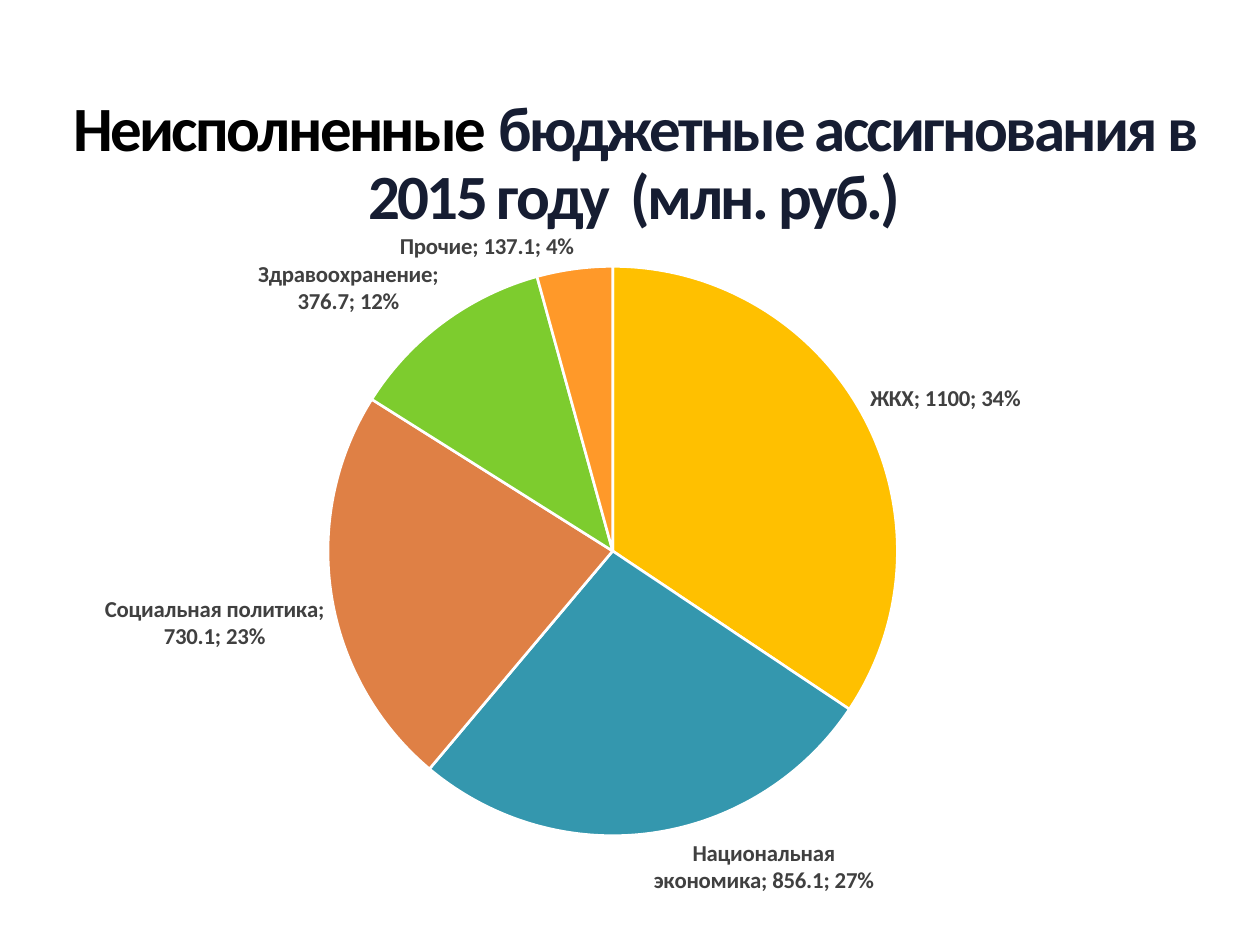
import pptx
import pptx.chart.data
import pptx.dml.color
import pptx.enum.chart
import pptx.enum.text
import pptx.util
from dataclasses import dataclass
from lxml import etree
from pptx.util import Cm


@dataclass(frozen=True)
class Theme:
    font: str = "Calibri"
    title_size: int = 36
    label_size: int = 13
    chart_size: int = 10
    black: str = "000000"
    navy: str = "161D32"
    grey: str = "404040"
    white: str = "FFFFFF"


THEME = Theme()

TITLE = [
    ("Неисполненные ", THEME.black),
    ("бюджетные ассигнования в 2015 году  (млн. руб.)", THEME.navy),
]

# Category, value, slice colour
SLICES = [
    ("ЖКХ", 1100, "FFC000"),
    ("Национальная экономика", 856.1, "3497AE"),
    ("Социальная политика", 730.1, "DF8045"),
    ("Здравоохранение", 376.7, "7DCC2E"),
    ("Прочие", 137.1, "FF9929"),
]

# Plot area as fractions of the chart frame
PLOT = {"x": 0.23, "y": 0.09, "w": 0.52, "h": 0.82}


def set_all(obj, values):
    for name, value in values.items():
        setattr(obj, name, value)


def rgb(color):
    return pptx.dml.color.RGBColor.from_string(color)


def set_font(font, size, color, bold):
    set_all(font, {"name": THEME.font, "size": pptx.util.Pt(size), "bold": bold})
    font.color.rgb = rgb(color)


def add_title(slide, box):
    tf = slide.shapes.add_textbox(*box).text_frame
    set_all(tf, {
        "word_wrap": True,
        "vertical_anchor": pptx.enum.text.MSO_ANCHOR.MIDDLE,
        "margin_left": 0, "margin_right": 0, "margin_top": 0, "margin_bottom": 0,
    })
    p = tf.paragraphs[0]
    set_all(p, {"alignment": pptx.enum.text.PP_ALIGN.CENTER, "line_spacing": 0.9})
    for text, color in TITLE:
        r = p.add_run()
        r.text = text
        set_font(r.font, THEME.title_size, color, True)
        r.font._element.set("spc", "-150")


def set_plot_layout(chart):
    plot_area = chart._chartSpace.chart.plotArea
    ns = plot_area.nsmap["c"]
    for old in plot_area.findall(f"{{{ns}}}layout"):
        plot_area.remove(old)
    layout = etree.Element(f"{{{ns}}}layout")
    manual = etree.SubElement(layout, f"{{{ns}}}manualLayout")
    settings = {"layoutTarget": "inner", "xMode": "edge", "yMode": "edge", **PLOT}
    for tag, value in settings.items():
        etree.SubElement(manual, f"{{{ns}}}{tag}").set("val", str(value))
    plot_area.insert(0, layout)


def add_pie(slide, box):
    data = pptx.chart.data.CategoryChartData()
    data.categories = [name for name, _, _ in SLICES]
    data.add_series("Series 1", [value for _, value, _ in SLICES])
    kind = pptx.enum.chart.XL_CHART_TYPE.PIE
    chart = slide.shapes.add_chart(kind, *box, data).chart
    set_all(chart, {"has_legend": False, "has_title": False})
    set_font(chart.font, THEME.chart_size, THEME.black, False)
    set_plot_layout(chart)

    # Slices
    plot = chart.plots[0]
    plot.vary_by_categories = True
    for i, (_, _, color) in enumerate(SLICES):
        fmt = plot.series[0].points[i].format
        fmt.fill.solid()
        fmt.fill.fore_color.rgb = rgb(color)
        fmt.line.color.rgb = rgb(THEME.white)
        fmt.line.width = pptx.util.Pt(1.5)

    # Labels
    labels = plot.series[0].data_labels
    set_all(labels, {
        "show_category_name": True,
        "show_value": True,
        "show_percentage": True,
        "position": pptx.enum.chart.XL_LABEL_POSITION.OUTSIDE_END,
    })
    set_font(labels.font, THEME.label_size, THEME.grey, True)


def main():
    prs = pptx.Presentation()
    set_all(prs, {"slide_width": Cm(25.4), "slide_height": Cm(19.05)})
    slide = prs.slides.add_slide(prs.slide_layouts[6])
    add_title(slide, (Cm(0.69), Cm(2.34), Cm(24.2), Cm(1.98)))
    add_pie(slide, (Cm(0.69), Cm(4.11), Cm(23.8), Cm(14)))
    prs.save("out.pptx")


if __name__ == "__main__":
    main()
